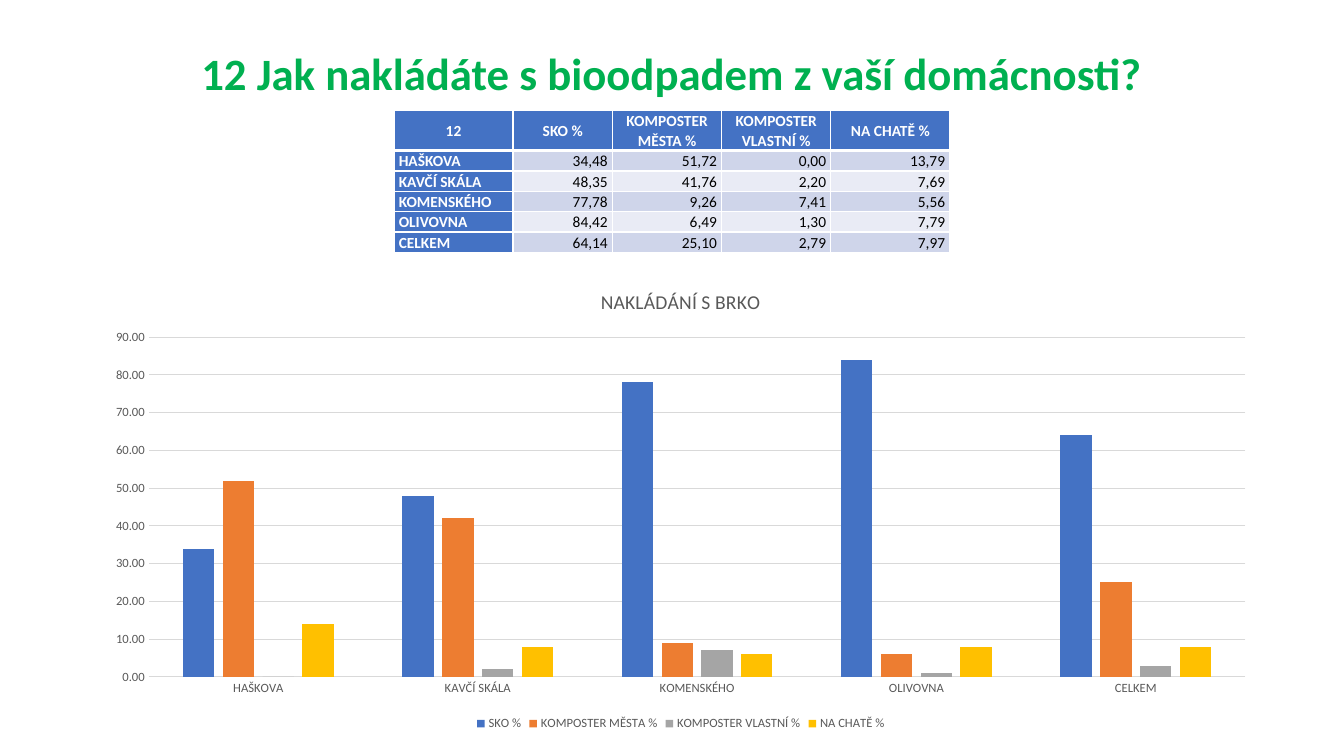
from dataclasses import dataclass

from lxml import etree
from pptx import Presentation
from pptx.chart.data import CategoryChartData
from pptx.dml.color import RGBColor as RGB
from pptx.enum.chart import XL_CHART_TYPE as ChartType
from pptx.enum.chart import XL_LEGEND_POSITION as LegendPos
from pptx.enum.chart import XL_TICK_MARK as Tick
from pptx.enum.text import MSO_ANCHOR as Anchor
from pptx.enum.text import PP_ALIGN as Align
from pptx.oxml.ns import qn
from pptx.util import Cm, Pt


@dataclass(frozen=True)
class Theme:
    font: str = "Calibri"
    title: str = "00B050"
    white: str = "FFFFFF"
    black: str = "000000"
    muted: str = "595959"
    grid: str = "D9D9D9"
    header: str = "4472C4"
    bands: tuple = ("CFD5EA", "E9EBF5")
    series: tuple = ("4472C4", "ED7D31", "A5A5A5", "FFC000")
    title_size: int = 32
    table_size: int = 11
    chart_title_size: int = 14
    chart_size: int = 9


T = Theme()


def set_font(font, size, color, bold=False):
    font.name, font.size, font.bold = T.font, Pt(size), bold
    font.color.rgb = RGB.from_string(color)


def set_line(line, color):
    line.width = Pt(0.75)
    line.color.rgb = RGB.from_string(color)


header = ["12", "SKO %", "KOMPOSTER MĚSTA %", "KOMPOSTER VLASTNÍ %", "NA CHATĚ %"]
streets = [
    ["HAŠKOVA", "34,48", "51,72", "0,00", "13,79"],
    ["KAVČÍ SKÁLA", "48,35", "41,76", "2,20", "7,69"],
    ["KOMENSKÉHO", "77,78", "9,26", "7,41", "5,56"],
    ["OLIVOVNA", "84,42", "6,49", "1,30", "7,79"],
    ["CELKEM", "64,14", "25,10", "2,79", "7,97"],
]

prs = Presentation()
prs.slide_width, prs.slide_height = Cm(33.87), Cm(19.05)
s = prs.slides.add_slide(prs.slide_layouts[5])

# Title
title = s.shapes.title
title.left, title.top, title.width, title.height = Cm(2.33), Cm(1.02), Cm(29.21), Cm(1.63)
tf = title.text_frame
tf.text = "12 Jak nakládáte s bioodpadem z vaší domácnosti?"
tf.vertical_anchor = Anchor.MIDDLE
p = tf.paragraphs[0]
p.alignment = Align.CENTER
set_font(p.font, T.title_size, T.title, bold=True)

# Table
rows = [header] + streets
table = s.shapes.add_table(len(rows), len(header), Cm(9.93), Cm(2.77), Cm(14), Cm(3.58)).table
table.first_col = True
for column, width in zip(table.columns, (3, 2.51, 2.75, 2.75, 3)):
    column.width = Cm(width)
for i, row in enumerate(rows):
    table.rows[i].height = Cm(0.51 if i else 1.02)
    for j, text in enumerate(row):
        cell = table.cell(i, j)
        is_head = i == 0 or j == 0
        cell.text = text
        cell.margin_left = cell.margin_right = Cm(0.12)
        cell.margin_top = cell.margin_bottom = 0
        cell.vertical_anchor = Anchor.BOTTOM if i else Anchor.MIDDLE
        cell.fill.solid()
        cell.fill.fore_color.rgb = RGB.from_string(T.header if is_head else T.bands[(i - 1) % 2])
        p = cell.text_frame.paragraphs[0]
        p.alignment = Align.CENTER if i == 0 else Align.RIGHT if j else Align.LEFT
        p.line_spacing, p.space_after = 1.07, Pt(8)
        set_font(p.font, T.table_size, T.white if is_head else T.black, bold=is_head)

# Thick rule under the header row
for cell in table.rows[0].cells:
    border = etree.Element(qn("a:lnB"), w=str(Pt(3)))
    fill = etree.SubElement(border, qn("a:solidFill"))
    etree.SubElement(fill, qn("a:srgbClr"), val=T.white)
    cell._tc.tcPr.insert(0, border)

# Chart
data = CategoryChartData(number_format="0.00")
data.categories = [row[0] for row in streets]
for j, name in enumerate(header[1:], 1):
    data.add_series(name, [round(float(row[j].replace(",", "."))) for row in streets])
chart = s.shapes.add_chart(ChartType.COLUMN_CLUSTERED, Cm(2.33), Cm(6.8), Cm(29.65), Cm(11.72), data).chart
set_font(chart.font, T.chart_size, T.muted)

chart.has_title = True
chart.chart_title.include_in_layout = False
tf = chart.chart_title.text_frame
tf.text = "NAKLÁDÁNÍ S BRKO"
set_font(tf.paragraphs[0].font, T.chart_title_size, T.muted)

chart.has_legend = True
chart.legend.position = LegendPos.BOTTOM
chart.legend.include_in_layout = False
set_font(chart.legend.font, T.chart_size, T.muted)

plot = chart.plots[0]
plot.gap_width, plot.overlap, plot.vary_by_categories = 219, -27, False
for series, color in zip(plot.series, T.series):
    series.format.fill.solid()
    series.format.fill.fore_color.rgb = RGB.from_string(color)
    series.invert_if_negative = False

for axis in (chart.category_axis, chart.value_axis):
    axis.major_tick_mark = axis.minor_tick_mark = Tick.NONE
    set_font(axis.tick_labels.font, T.chart_size, T.muted)
set_line(chart.category_axis.format.line, T.grid)

values = chart.value_axis
values.minimum_scale, values.maximum_scale, values.major_unit = 0, 90, 10
values.tick_labels.number_format = "0.00"
values.tick_labels.number_format_is_linked = False
values.format.line.fill.background()
set_line(values.major_gridlines.format.line, T.grid)

prs.save("out.pptx")
